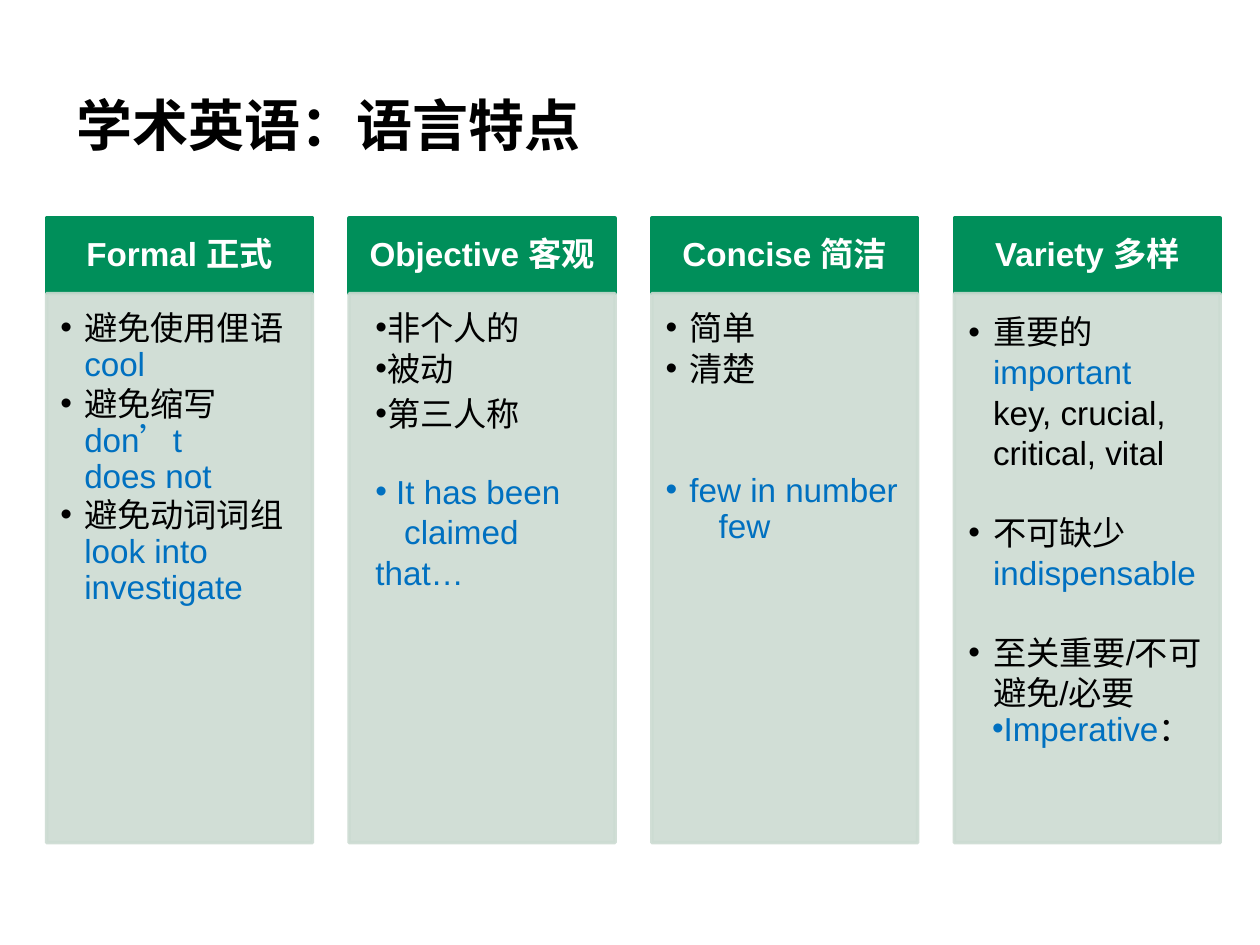
from dataclasses import dataclass

from lxml.etree import SubElement
from pptx import Presentation
from pptx.dml.color import RGBColor
from pptx.enum.shapes import MSO_SHAPE
from pptx.enum.text import MSO_ANCHOR, PP_ALIGN
from pptx.oxml.ns import qn
from pptx.util import Cm, Pt


@dataclass(frozen=True)
class Theme:
    green: str = "008F5A"
    pale: str = "CCDBD2"
    black: str = "000000"
    blue: str = "0070C0"
    white: str = "FFFFFF"
    latin: str = "Arial"
    chinese: str = "Noto Sans CJK SC"
    title_size: int = 32
    text_size: int = 19
    border: int = 2


THEME = Theme()
BLACK, BLUE = THEME.black, THEME.blue
TIGHT, LOOSE = 20.5, 22.9


@dataclass(frozen=True)
class Item:
    runs: tuple
    margin: float = 0.48
    hanging: float = 0.48
    bullet: bool = True
    line: float = TIGHT
    before: float = 0


COLUMNS = (
    ("Formal 正式", (
        Item((("避免使用俚语", BLACK), ("cool", BLUE))),
        Item((("避免缩写\v", BLACK), ("don’t\vdoes not", BLUE)), before=2.2),
        Item((("避免动词词组", BLACK), ("look into investigate", BLUE)), before=2.2),
    )),
    ("Objective 客观", (
        Item((("非个人的", BLACK),), 0.25, 0),
        Item((("被动", BLACK),), 0.25, 0, before=3),
        Item((("第三人称", BLACK),), 0.25, 0, line=LOOSE, before=2.5),
        Item(((" It has been", BLUE),), 0.25, 0, line=LOOSE, before=22),
        Item((("claimed", BLUE),), 0.83, 0, bullet=False, line=LOOSE),
        Item((("that…", BLUE),), 0.25, 0, bullet=False, line=LOOSE),
    )),
    ("Concise 简洁", (
        Item((("简单", BLACK),)),
        Item((("清楚", BLACK),), before=3),
        Item((("few in number", BLUE),), before=48.5),
        Item((("few", BLUE),), 1.07, 0, bullet=False),
    )),
    ("Variety 多样", (
        Item((("重要的\v", BLACK), ("important\v", BLUE),
              ("key, crucial, critical, vital", BLACK)), 0.5, 0.5, line=LOOSE),
        Item((("不可缺少", BLACK), ("indispensable", BLUE)),
             0.5, 0.5, line=LOOSE, before=LOOSE),
        Item((("至关重要/不可避免/必要", BLACK),), 0.5, 0.5, line=LOOSE, before=LOOSE),
        Item((("Imperative", BLUE), ("：", BLACK)), 0.48, 0),
    )),
)


def add_run(para, text, color, size, bold=False, latin=THEME.latin):
    span = para.add_run()
    span.text = text
    font = span.font
    font.size = Pt(size)
    font.bold = bold
    font.color.rgb = RGBColor.from_string(color)
    font.name = latin
    SubElement(span.font._element, qn("a:ea"), typeface=THEME.chinese)


def add_runs(para, runs):
    for text, color in runs:
        for position, part in enumerate(text.split("\v")):
            if position:
                para.add_line_break()
            if part:
                add_run(para, part, color, THEME.text_size)


def set_margins(frame, left, top, right, bottom):
    frame.word_wrap = True
    frame.margin_left, frame.margin_top = Cm(left), Cm(top)
    frame.margin_right, frame.margin_bottom = Cm(right), Cm(bottom)


def add_title(page, text):
    box = page.shapes.add_textbox(Cm(1.55), Cm(0.46), Cm(20.5), Cm(2.72))
    set_margins(box.text_frame, 0, 0, 0, 0)
    box.text_frame.vertical_anchor = MSO_ANCHOR.BOTTOM
    add_run(box.text_frame.paragraphs[0], text, BLACK, THEME.title_size,
            bold=True, latin=THEME.chinese)


def add_panel(page, left, top, height, color, opacity=100):
    box = page.shapes.add_shape(
        MSO_SHAPE.RECTANGLE, Cm(left), Cm(top), Cm(5.36), Cm(height))
    box.shadow.inherit = False
    box.fill.solid()
    box.line.width = Pt(THEME.border)
    box.line.fill.solid()
    for paint in (box.fill, box.line.fill):
        paint.fore_color.rgb = RGBColor.from_string(color)
    if opacity < 100:
        for tint in box._element.spPr.iter(qn("a:srgbClr")):
            SubElement(tint, qn("a:alpha"), val=str(opacity * 1000))
    return box


def add_header(page, left, text):
    box = add_panel(page, left, 4.4, 1.52, THEME.green)
    set_margins(box.text_frame, 0.38, 0.2, 0.38, 0.2)
    box.text_frame.vertical_anchor = MSO_ANCHOR.MIDDLE
    para = box.text_frame.paragraphs[0]
    para.alignment = PP_ALIGN.CENTER
    para.line_spacing = 0.9
    add_run(para, text, THEME.white, THEME.text_size, bold=True)


def set_bullet(para, item):
    properties = para._p.get_or_add_pPr()
    properties.set("marL", str(Cm(item.margin)))
    properties.set("indent", str(-Cm(item.hanging)))
    if item.bullet:
        SubElement(properties, qn("a:buFont"), typeface=THEME.latin)
        SubElement(properties, qn("a:buChar"), char="•")
    else:
        SubElement(properties, qn("a:buNone"))


def add_body(page, left, items):
    box = add_panel(page, left, 5.92, 11.07, THEME.pale, opacity=90)
    frame = box.text_frame
    set_margins(frame, 0.28, 0.36, 0.33, 0.43)
    frame.vertical_anchor = MSO_ANCHOR.TOP
    for position, item in enumerate(items):
        para = frame.add_paragraph() if position else frame.paragraphs[0]
        set_bullet(para, item)
        para.alignment = PP_ALIGN.LEFT
        para.line_spacing = Pt(item.line)
        if item.before:
            para.space_before = Pt(item.before)
        add_runs(para, item.runs)


def main():
    deck = Presentation()
    deck.slide_width, deck.slide_height = Cm(25.4), Cm(19.05)
    page = deck.slides.add_slide(deck.slide_layouts[6])
    add_title(page, "学术英语：语言特点")
    for position, (heading, items) in enumerate(COLUMNS):
        left = 0.94 + position * 6.1
        add_header(page, left, heading)
        add_body(page, left, items)
    deck.save("out.pptx")


if __name__ == "__main__":
    main()
